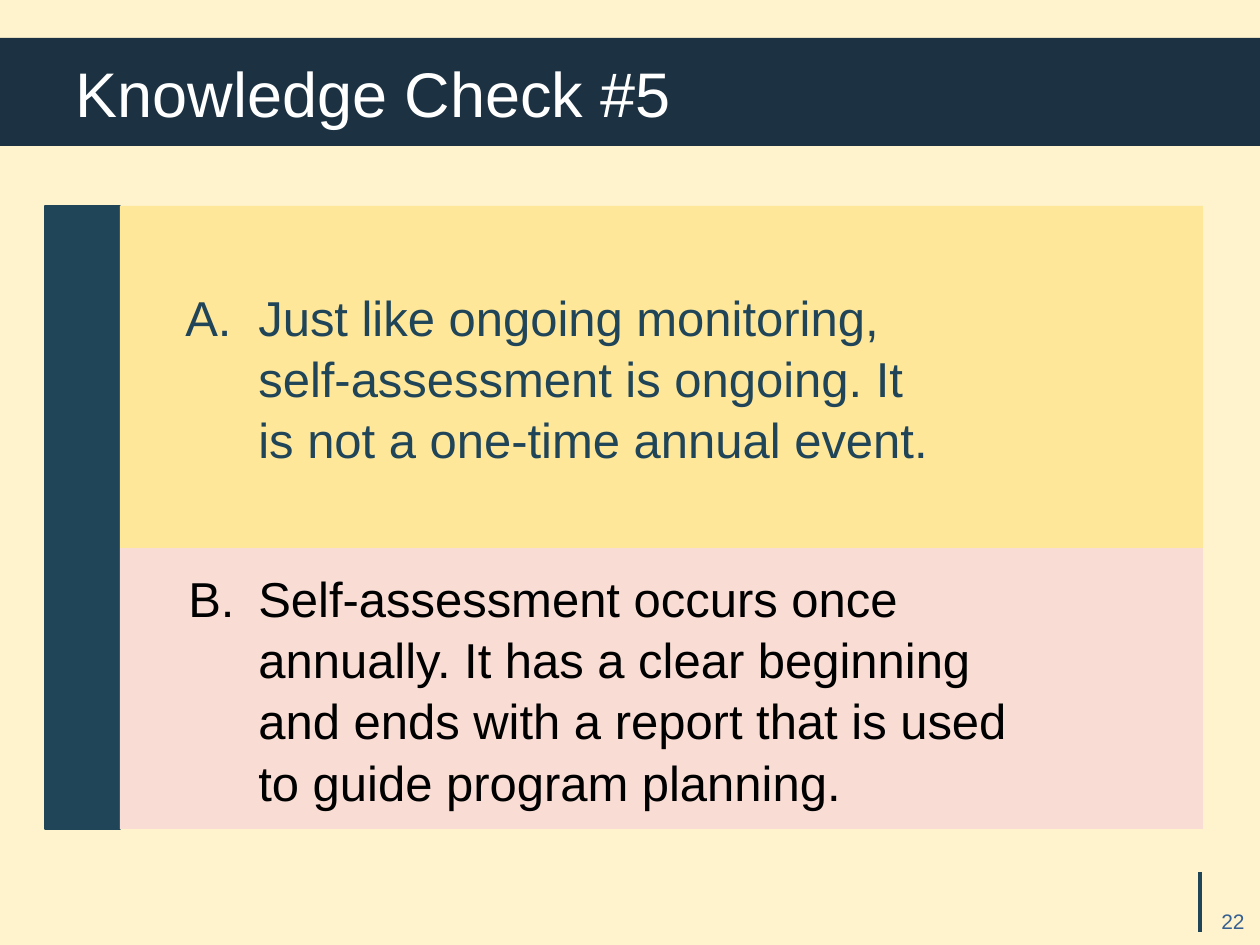
from lxml import etree
from pptx import Presentation
from pptx.dml.color import RGBColor
from pptx.enum.shapes import MSO_CONNECTOR, MSO_SHAPE
from pptx.enum.text import MSO_ANCHOR, MSO_AUTO_SIZE, PP_ALIGN
from pptx.oxml.ns import qn
from pptx.util import Pt

RECTANGLE = MSO_SHAPE.RECTANGLE
STRAIGHT = MSO_CONNECTOR.STRAIGHT
MIDDLE = MSO_ANCHOR.MIDDLE
NO_AUTOFIT = MSO_AUTO_SIZE.NONE
LEFT, RIGHT = PP_ALIGN.LEFT, PP_ALIGN.RIGHT

CREAM = RGBColor(0xFF, 0xF3, 0xCD)
NAVY = RGBColor(0x1C, 0x31, 0x41)
TEAL = RGBColor(0x20, 0x45, 0x59)
YELLOW = RGBColor(0xFF, 0xE7, 0x9A)
PINK = RGBColor(0xF9, 0xDD, 0xD4)
BLUE = RGBColor(0x37, 0x60, 0x92)
WHITE = RGBColor(0xFF, 0xFF, 0xFF)
BLACK = RGBColor(0, 0, 0)

FONT = "Arial"
EMU_PER_PX = 914400 / 126
RAIL_WIDTH = 75
TEXT_INDENT = 126

# text, height, hanging indent, fill, text colour
ANSWERS = [
    ("Just like ongoing monitoring, \vself-assessment is ongoing. It \v"
     "is not a one-time annual event.", 342, 73, YELLOW, TEAL),
    ("Self-assessment occurs once \vannually. It has a clear beginning \v"
     "and ends with a report that is used \vto guide program planning.",
     281, 70, PINK, BLACK),
]


def px(length):
    return round(length * EMU_PER_PX)


def box_emu(*box):
    return [px(length) for length in box]


def set_font(paragraph, size, color):
    paragraph.font.name = FONT
    paragraph.font.size = Pt(size)
    paragraph.font.color.rgb = color


def add_rectangle(slide, box, fill):
    rectangle = slide.shapes.add_shape(RECTANGLE, *box_emu(*box))
    rectangle.shadow.inherit = False
    rectangle.fill.solid()
    rectangle.fill.fore_color.rgb = fill
    rectangle.line.fill.background()
    return rectangle


def add_title(slide, left, top, width, height):
    title = slide.shapes.title
    title.left, title.top, title.width, title.height = box_emu(left, top, width, height)
    title.fill.solid()
    title.fill.fore_color.rgb = NAVY
    frame = title.text_frame
    frame.text = "Knowledge Check #5"
    frame.auto_size = NO_AUTOFIT
    frame.vertical_anchor = MIDDLE
    heading = frame.paragraphs[0]
    heading.alignment = LEFT
    heading._p.get_or_add_pPr().set("indent", str(px(63)))
    set_font(heading, 36, WHITE)


def add_letter(paragraph, number, hanging):
    properties = paragraph._p.get_or_add_pPr()
    properties.set("marL", str(px(TEXT_INDENT)))
    properties.set("indent", str(-px(hanging)))
    etree.SubElement(properties, qn("a:buFont"), typeface=FONT)
    etree.SubElement(properties, qn("a:buAutoNum"),
                     type="alphaUcPeriod", startAt=str(number))


def add_answers(slide, left, top, width):
    # Dark rail beside all the answers
    total_height = sum(answer[1] for answer in ANSWERS)
    rail = add_rectangle(slide, (left, top, RAIL_WIDTH, total_height), TEAL)
    rail.line.color.rgb = TEAL
    rail.line.width = Pt(0.75)

    # Lettered answers, stacked
    for number, (text, height, hanging, fill, color) in enumerate(ANSWERS, 1):
        panel = add_rectangle(
            slide, (left + RAIL_WIDTH, top, width - RAIL_WIDTH, height), fill)
        frame = panel.text_frame
        frame.word_wrap = True
        frame.vertical_anchor = MIDDLE
        answer = frame.paragraphs[0]
        answer.text = text
        answer.alignment = LEFT
        answer.line_spacing = 1.04
        add_letter(answer, number, hanging)
        set_font(answer, 28, color)
        top += height


def add_page_number(slide, left, top, width, height):
    # Vertical rule
    rule = slide.shapes.add_connector(
        STRAIGHT, *box_emu(left + 43, top, left + 43, top + 60))
    rule.line.color.rgb = TEAL
    rule.line.width = Pt(2)
    etree.SubElement(rule._element.spPr, qn("a:effectLst"))

    # Number
    number_box = slide.shapes.add_textbox(*box_emu(left, top + 30, width, height - 30))
    number_box.text_frame.word_wrap = True
    number = number_box.text_frame.paragraphs[0]
    number.text = "22"
    number.alignment = RIGHT
    set_font(number, 12, BLUE)


def main():
    presentation = Presentation()
    presentation.slide_width, presentation.slide_height = box_emu(1260, 945)
    slide = presentation.slides.add_slide(presentation.slide_layouts[5])
    slide.background.fill.solid()
    slide.background.fill.fore_color.rgb = CREAM

    add_title(slide, 0, 38, 1260, 108)
    add_answers(slide, 45, 206, 1158)
    add_page_number(slide, 1157, 872, 100, 80)
    presentation.save("out.pptx")


if __name__ == "__main__":
    main()
